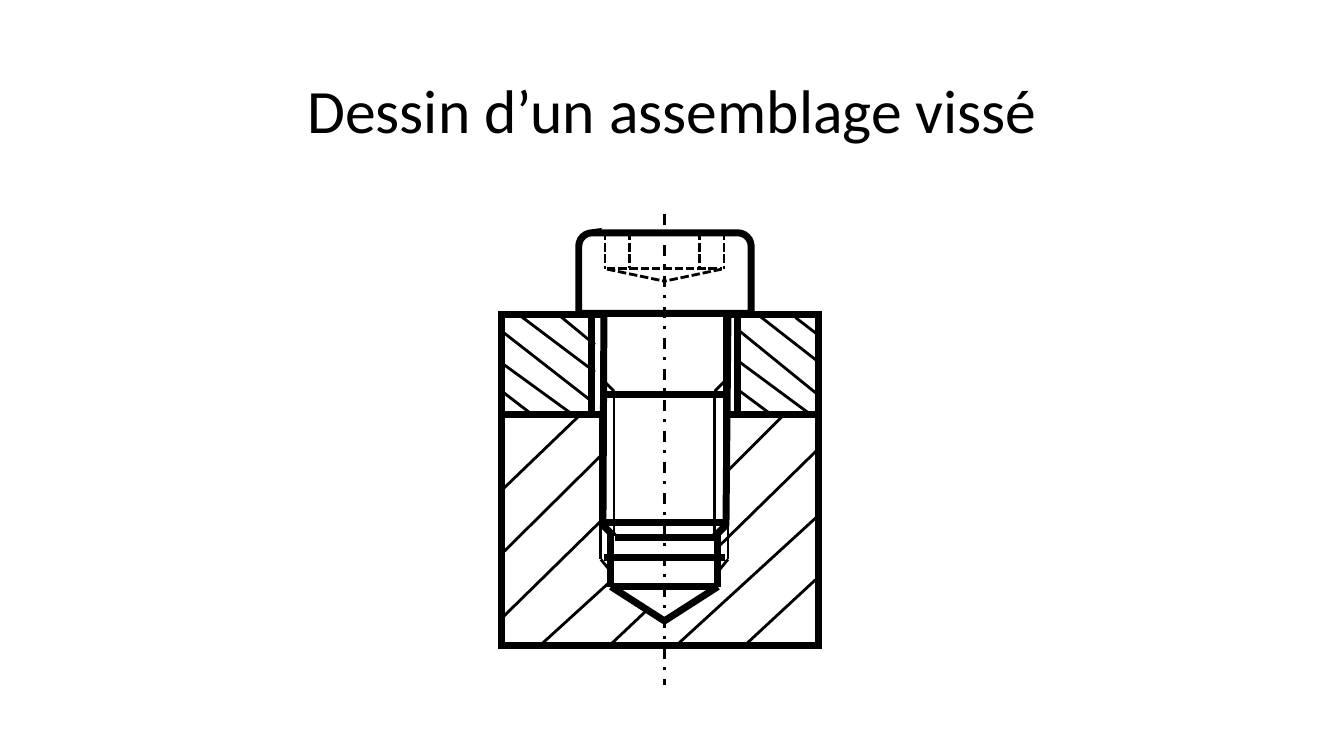
from lxml import etree
from pptx import Presentation
from pptx import util as u
from pptx.dml.color import RGBColor
from pptx.enum import dml, shapes, text
from pptx.oxml import ns

TITLE = "Dessin d’un assemblage vissé"
INK, PAPER = "000000", "FFFFFF"
THICK, THIN, FINE = 5, 2, 1
AXIS = 6.59
CM_PER_UNIT = 2.54

# left, top, width, height
title_box = (0.92, 0.4, 11.5, 1.45)
plate = (4.97, 3.12, 3.15, 0.99)
screw_head = (5.74, 2.31, 1.71, 0.8)
block = (4.97, 4.11, 3.15, 2.29)
shank = (6, 3.14, 1.18, 2.06)

plate_hatching = [
    (5.9, 3.69, 5.17, 3.14), (5.88, 3.99, 4.97, 3.28), (5.9, 3.42, 5.56, 3.14),
    (5.69, 4.12, 4.96, 3.59), (5.3, 4.13, 4.95, 3.86), (8.13, 3.6, 7.54, 3.14),
    (8.13, 3.93, 7.33, 3.28), (8.11, 3.32, 7.89, 3.15), (8.05, 4.12, 7.32, 3.58),
    (7.66, 4.12, 7.31, 3.86),
]
block_hatching = [
    (5.76, 4.11, 4.97, 4.87), (6.03, 4.45, 4.97, 5.5), (6.05, 5.08, 4.98, 6.13),
    (6.03, 5.79, 5.36, 6.4), (7.78, 4.11, 7.14, 4.75), (6.42, 6.05, 6.06, 6.39),
    (8.12, 4.45, 7.14, 5.41), (8.1, 5.13, 6.69, 6.42), (8.09, 5.75, 7.4, 6.39),
]
shank_sides = [(7.22, 3.15, 7.2, 5.22), (5.99, 3.1, 5.98, 5.22)]
centre_line = [(AXIS, 2.12, AXIS, 6.8)]

# distance from axis, y, distance from axis, y
plate_bore = [(0.72, 3.13, 0.72, 4.12)]
drilled_hole = [(0.53, 5.29, 0.53, 5.82), (0.53, 5.82, 0, 6.16)]
hole_thread = [(0.63, 4.14, 0.63, 5.55), (0.63, 5.55, 0.54, 5.66)]
screw_tip = [(0.61, 5.21, 0.5, 5.32)]
screw_thread = [(0.5, 3.91, 0.5, 5.32), (0.59, 3.79, 0.5, 3.88)]
socket = [(0.59, 2.3, 0.59, 2.67), (0.35, 2.3, 0.35, 2.66), (0.57, 2.67, 0, 2.79)]

# distance from axis, y
hole_levels = [(0.52, 5.82), (0.6, 5.53)]
screw_levels = [(0.6, 5.18), (0.49, 5.33), (0.6, 3.91)]
socket_levels = [(0.57, 2.66)]


def length(value):
    return u.Cm(value * CM_PER_UNIT)


def colour(code):
    return RGBColor.from_string(code)


def mirrored(half):
    return [(AXIS + side * a, y1, AXIS + side * b, y2)
            for a, y1, b, y2 in half for side in (1, -1)]


def across(levels):
    return [(AXIS - reach, y, AXIS + reach, y) for reach, y in levels]


def strokes(slide, segments, weight, dash=None):
    for ends in segments:
        stroke = slide.shapes.add_connector(
            shapes.MSO_CONNECTOR.STRAIGHT, *map(length, ends))
        stroke.line.color.rgb = colour(INK)
        stroke.line.width = u.Pt(weight)
        if dash:
            stroke.line.dash_style = dash
        etree.SubElement(stroke._element.spPr, ns.qn("a:effectLst"))


def outline(slide, box, weight, preset=shapes.MSO_SHAPE.RECTANGLE, fill=None):
    part = slide.shapes.add_shape(preset, *map(length, box))
    part.shadow.inherit = False
    if fill:
        part.fill.solid()
        part.fill.fore_color.rgb = colour(fill)
    else:
        part.fill.background()
    part.line.color.rgb = colour(INK)
    part.line.width = u.Pt(weight)
    miter = etree.SubElement(part.line._get_or_add_ln(), ns.qn("a:miter"))
    miter.set("lim", "800000")


def heading(slide):
    frame = slide.shapes.add_textbox(*map(length, title_box)).text_frame
    frame.word_wrap = True
    frame.vertical_anchor = text.MSO_ANCHOR.MIDDLE
    paragraph = frame.paragraphs[0]
    paragraph.text = TITLE
    paragraph.alignment = text.PP_ALIGN.CENTER
    paragraph.line_spacing = 0.9
    paragraph.font.size = u.Pt(44)
    paragraph.font.name = "Calibri"
    paragraph.font.color.rgb = colour(INK)


def main():
    deck = Presentation()
    deck.slide_width, deck.slide_height = length(13.33), length(7.5)
    slide = deck.slides.add_slide(deck.slide_layouts[6])
    heading(slide)

    outline(slide, plate, THICK)
    strokes(slide, mirrored(plate_bore), THICK)
    strokes(slide, plate_hatching, THIN)
    outline(slide, screw_head, THICK, shapes.MSO_SHAPE.ROUND_2_SAME_RECTANGLE)

    outline(slide, block, THICK)
    strokes(slide, mirrored(drilled_hole) + across(hole_levels), THICK)
    strokes(slide, block_hatching + mirrored(hole_thread), THIN)

    outline(slide, shank, FINE, fill=PAPER)
    strokes(slide, centre_line, THIN, dml.MSO_LINE.DASH_DOT)
    strokes(slide, shank_sides + mirrored(screw_tip) + across(screw_levels), THICK)
    strokes(slide, mirrored(screw_thread), THIN)
    strokes(slide, across(socket_levels) + mirrored(socket), THIN,
            dml.MSO_LINE.SQUARE_DOT)

    deck.save("out.pptx")


if __name__ == "__main__":
    main()
